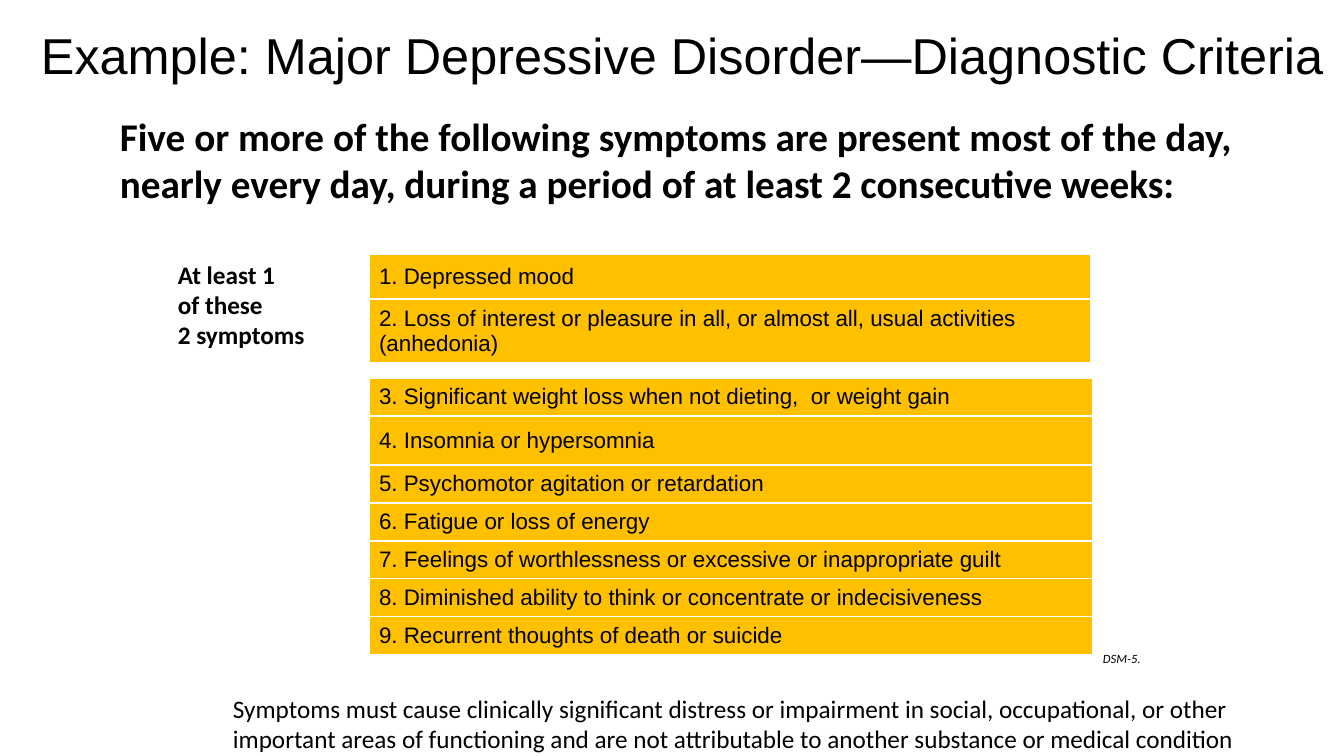
from pptx import Presentation
from pptx import util as u
from pptx.dml.color import RGBColor
from pptx.enum import text

EMU_PER_PX = 914400 / 100.8
COLORS = {"ink": "000000", "criteria": "FFC000"}

TITLE = "Example: Major Depressive Disorder—Diagnostic Criteria"
RULE = ("Five or more of the following symptoms are present most of the day, "
        "nearly every day, during a period of at least 2 consecutive weeks:")
CORE_LABEL = ["At least 1", "of these\n2 symptoms"]
IMPAIRMENT = ("Symptoms must cause clinically significant distress or impairment in social, "
              "occupational, or other important areas of functioning and are not attributable "
              "to another substance or medical condition")
MANUAL = [("DSM-5", True), (".", False)]

# Each criterion: wording, row height in px
CORE_CRITERIA = [
    ("1. Depressed mood", 45),
    ("2. Loss of interest or pleasure in all, or almost all, usual activities (anhedonia)", 60),
]
OTHER_CRITERIA = [
    ("3. Significant weight loss when not dieting,  or weight gain", 38),
    ("4. Insomnia or hypersomnia", 49),
    ("5. Psychomotor agitation or retardation", 38),
    ("6. Fatigue or loss of energy", 38),
    ("7. Feelings of worthlessness or excessive or inappropriate guilt", 38),
    ("8. Diminished ability to think or concentrate or indecisiveness", 38),
    ("9. Recurrent thoughts of death or suicide", 38),
]


def px(length):
    return u.Emu(round(length * EMU_PER_PX))


def style(run, size, font="Calibri", bold=False, italic=False):
    run.font.size = u.Pt(size)
    run.font.name = font
    run.font.bold = bold
    run.font.italic = italic
    run.font.color.rgb = RGBColor.from_string(COLORS["ink"])


def write(frame, paragraphs, spacing=None, **look):
    """Fill a text frame with one paragraph per string, all in the same look."""
    frame.word_wrap = True
    for number, wording in enumerate(paragraphs):
        paragraph = frame.add_paragraph() if number else frame.paragraphs[0]
        paragraph.text = wording
        paragraph.line_spacing = spacing
        for run in paragraph.runs:
            style(run, **look)


def add_text_frame(slide, left, top, width, height):
    return slide.shapes.add_textbox(px(left), px(top), px(width), px(height)).text_frame


def add_criteria(slide, criteria, left, top, width):
    height = sum(row_height for _, row_height in criteria)
    frame = slide.shapes.add_table(len(criteria), 1, px(left), px(top), px(width), px(height))
    table = frame.table
    table.first_row = table.horz_banding = False
    for row, (wording, row_height) in zip(table.rows, criteria):
        row.height = px(row_height)
        cell = row.cells[0]
        cell.fill.solid()
        cell.fill.fore_color.rgb = RGBColor.from_string(COLORS["criteria"])
        cell.vertical_anchor = text.MSO_ANCHOR.MIDDLE
        write(cell.text_frame, [wording], size=16, font="Arial")


def main():
    deck = Presentation()
    deck.slide_width, deck.slide_height = px(1344), px(756)
    slide = deck.slides.add_slide(deck.slide_layouts[6])

    title = add_text_frame(slide, 36, -15, 1308, 146)
    title.margin_left = title.margin_right = px(5)
    title.vertical_anchor = text.MSO_ANCHOR.MIDDLE
    write(title, [TITLE], spacing=0.9, size=36, font="Arial")

    write(add_text_frame(slide, 110, 107, 1161, 67), [RULE], size=28, bold=True)
    add_criteria(slide, CORE_CRITERIA, 369, 254, 722)
    add_criteria(slide, OTHER_CRITERIA, 369, 378, 724)
    write(add_text_frame(slide, 168, 254, 170, 101), CORE_LABEL, size=18, bold=True)
    write(add_text_frame(slide, 223, 688, 1096, 67), [IMPAIRMENT], size=18)

    manual = add_text_frame(slide, 1093, 646, 76, 25)
    manual.word_wrap = True
    for wording, italic in MANUAL:
        run = manual.paragraphs[0].add_run()
        run.text = wording
        style(run, size=9, italic=italic)

    deck.save("out.pptx")


if __name__ == "__main__":
    main()
